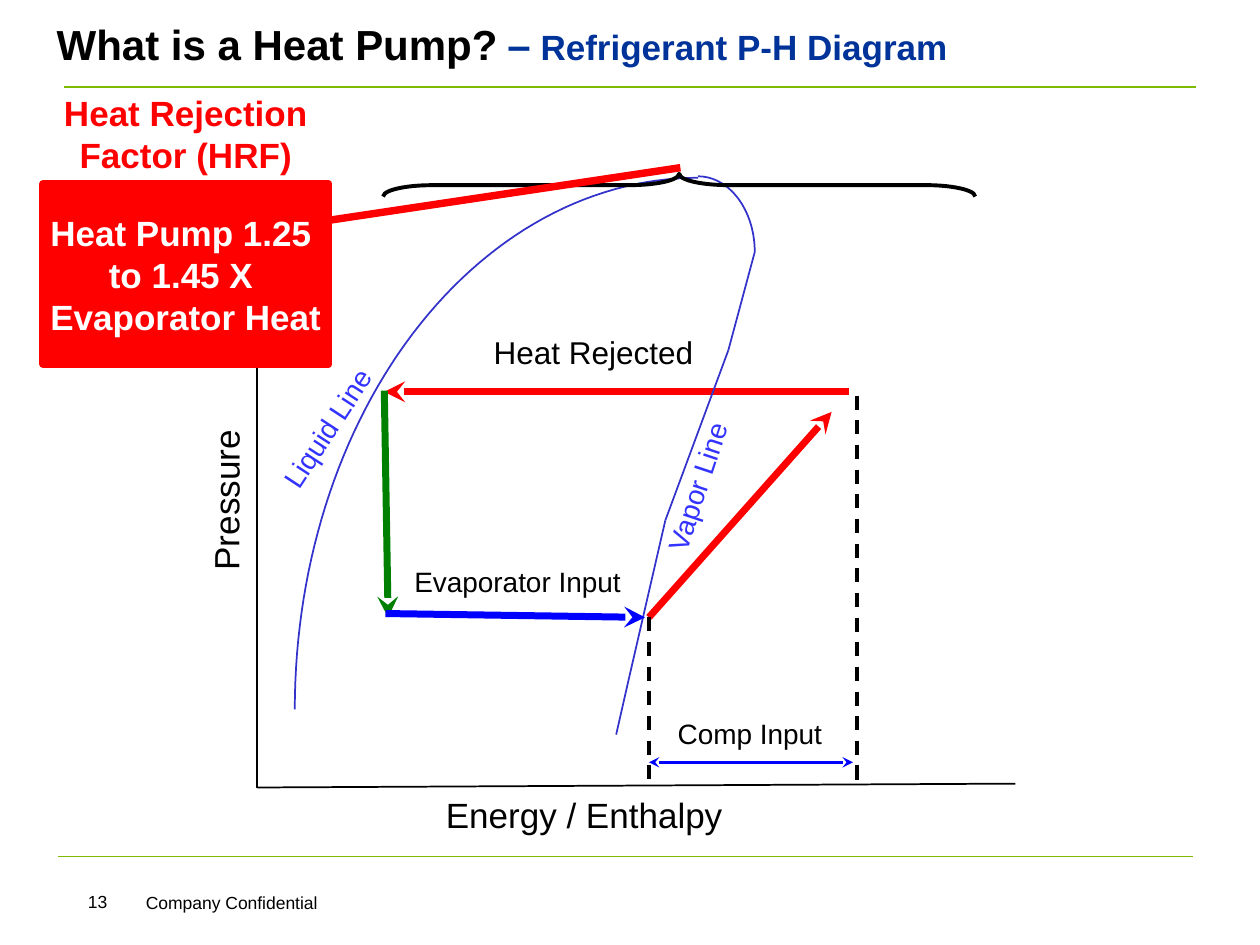
"""Builds the heat pump slide with its refrigerant pressure-enthalpy diagram."""
from itertools import pairwise
from math import cos, pi, sin

from lxml.etree import SubElement
from pptx import Presentation
from pptx.dml.color import RGBColor
from pptx.enum.dml import MSO_LINE
from pptx.enum.shapes import MSO_CONNECTOR, MSO_SHAPE
from pptx.enum.text import MSO_ANCHOR, MSO_AUTO_SIZE, PP_ALIGN
from pptx.oxml.ns import qn
from pptx.util import Pt

COLORS = {
    "black": "000000", "white": "FFFFFF", "rule": "7DBA00", "navy": "003399",
    "red": "FF0000", "green": "008000", "blue": "0000FF",
    "curve": "3333CC", "curve_label": "3333FF",
}


def rgb(name):
    return RGBColor.from_string(COLORS[name])


def add_run(paragraph, text, *, size=16, color="black", bold=False, font="Arial"):
    run = paragraph.add_run()
    run.text = text
    run.font.name = font
    run.font.size = Pt(size)
    run.font.bold = bold
    run.font.color.rgb = rgb(color)


class DiagramSlide:
    def __init__(self, slide, font="Arial"):
        self.slide = slide
        self.shapes = slide.shapes
        self.font = font

    def title(self, box, runs):
        shape = self.shapes.title
        shape.left, shape.top, shape.width, shape.height = map(Pt, box)
        frame = shape.text_frame
        frame.auto_size = MSO_AUTO_SIZE.NONE
        frame.vertical_anchor = MSO_ANCHOR.MIDDLE
        paragraph = frame.paragraphs[0]
        paragraph.alignment = PP_ALIGN.LEFT
        for text, size, color in runs:
            add_run(paragraph, text, size=size, color=color, bold=True, font=self.font)

    def label(self, text, box, *, rotation=0, align=PP_ALIGN.LEFT, **style):
        shape = self.shapes.add_textbox(*map(Pt, box))
        shape.rotation = rotation
        shape.text_frame.word_wrap = True
        paragraph = shape.text_frame.paragraphs[0]
        paragraph.alignment = align
        add_run(paragraph, text, font=self.font, **style)

    def line(self, start, end, color="black", width=1, *, dashed=False, ends=()):
        connector = self.shapes.add_connector(
            MSO_CONNECTOR.STRAIGHT, *map(Pt, (*start, *end)))
        connector.line.color.rgb = rgb(color)
        connector.line.width = Pt(width)
        if dashed:
            connector.line.dash_style = MSO_LINE.DASH
        properties = connector.element.spPr
        for end_tag in ends:
            SubElement(properties.find(qn("a:ln")), qn(end_tag), type="stealth")
        SubElement(properties, qn("a:effectLst"))

    def quarter_arc(self, center, radii, start_angle, color="curve", steps=60):
        angles = [start_angle + pi / 2 * step / steps for step in range(steps + 1)]
        points = [(Pt(center[0] + radii[0] * cos(angle)),
                   Pt(center[1] + radii[1] * sin(angle))) for angle in angles]
        builder = self.shapes.build_freeform(*points[0])
        builder.add_line_segments(points[1:], close=False)
        self.outline(builder.convert_to_shape(), color, 1)

    def outline(self, shape, color, width):
        shape.shadow.inherit = False
        shape.fill.background()
        shape.line.color.rgb = rgb(color)
        shape.line.width = Pt(width)

    def brace(self, box):
        shape = self.shapes.add_shape(MSO_SHAPE.LEFT_BRACE, *map(Pt, box))
        shape.rotation = 90
        shape.adjustments[0] = 2.17
        self.outline(shape, "black", 2.25)

    def callout(self, lines, box, adjustments):
        shape = self.shapes.add_shape(MSO_SHAPE.LINE_CALLOUT_1, *map(Pt, box))
        for index, value in enumerate(adjustments):
            shape.adjustments[index] = value
        self.outline(shape, "red", 4.25)
        shape.fill.solid()
        shape.fill.fore_color.rgb = rgb("red")
        frame = shape.text_frame
        frame.word_wrap = False
        frame.vertical_anchor = MSO_ANCHOR.MIDDLE
        for index, text in enumerate(lines):
            paragraph = frame.add_paragraph() if index else frame.paragraphs[0]
            paragraph.alignment = PP_ALIGN.CENTER
            add_run(paragraph, text, size=20, color="white", bold=True, font=self.font)


def main():
    presentation = Presentation()
    presentation.slide_width, presentation.slide_height = Pt(720), Pt(540)
    diagram = DiagramSlide(presentation.slides.add_slide(presentation.slide_layouts[5]))
    head, tail = "a:headEnd", "a:tailEnd"

    diagram.line((33.1, 489.6), (681.8, 489.6), "rule", 0.75)
    diagram.line((36.7, 49.7), (683.3, 49.7), "rule", 0.75)
    diagram.label("Company Confidential", (76.3, 506.2, 241.2, 19.4), size=10)
    diagram.title((25.2, 0, 680.4, 49.7), [
        ("What is a Heat Pump?", 24, "black"), (" ", 20, "black"),
        ("–", 24, "navy"), (" Refrigerant P-H Diagram", 20, "navy")])

    diagram.line((219.6, 223.9), (485.3, 223.9), "red", 4, ends=[head])
    origin = (146.9, 450)
    diagram.line((146.9, 169.2), origin)
    diagram.line(origin, (580.3, 447.8))
    diagram.label("Pressure", (67, 255.6, 123.8, 31), rotation=270.2, size=20)
    diagram.label("Energy / Enthalpy", (247.7, 450, 205.2, 31), size=20)
    diagram.label("Liquid Line", (133.2, 216.7, 126.7, 26.6), rotation=303.2,
                  color="curve_label")
    diagram.label("Vapor Line", (326.9, 228.2, 167, 26.6), rotation=288.3,
                  color="curve_label")

    diagram.quarter_arc((398.9, 405.4), (230.4, 303.8), pi)
    diagram.quarter_arc((398.9, 144), (32.4, 43.2), -pi / 2)
    vapor_points = [(431.3, 144), (416.2, 200.2), (380.2, 297.4),
                    (359.3, 388.1), (352.1, 419.8)]
    for start, end in pairwise(vapor_points):
        diagram.line(start, end, "curve")

    diagram.line((219.6, 223.2), (221.8, 352.8), "green", 4, ends=[tail])
    diagram.line((220.3, 350.6), (368.6, 352.8), "blue", 4, ends=[tail])
    diagram.label("Evaporator Input", (229.7, 319, 133.9, 26.6))
    compressor_inlet = (370.8, 352.8)
    diagram.line(compressor_inlet, (475.2, 235.4), "red", 4, ends=[tail])
    diagram.line(compressor_inlet, (370.8, 450), width=2, dashed=True)
    diagram.line((489.6, 226.1), (489.6, 450), width=2, dashed=True)
    diagram.line((370.8, 435.6), (487.4, 435.6), "blue", 2, ends=[head, tail])
    diagram.label("Comp Input", (380.2, 406.1, 103.7, 26.6))
    diagram.label("Heat Rejected", (275, 186.5, 172.8, 28.8), size=18)

    diagram.brace((381.6, -63.4, 13, 338.4))
    diagram.label("Heat Rejection Factor (HRF)", (12.2, 49, 187.9, 55.4),
                  align=PP_ALIGN.CENTER, size=20, color="red", bold=True)
    diagram.callout(["Heat Pump 1.25 ", "to 1.45 X ", "Evaporator Heat"],
                    (24.5, 105.1, 163.4, 103), (0.2, 1.01, -0.09, 2.23))
    diagram.label("13", (36.7, 505.4, 38.2, 22.3), align=PP_ALIGN.CENTER, size=10)
    presentation.save("out.pptx")


if __name__ == "__main__":
    main()
